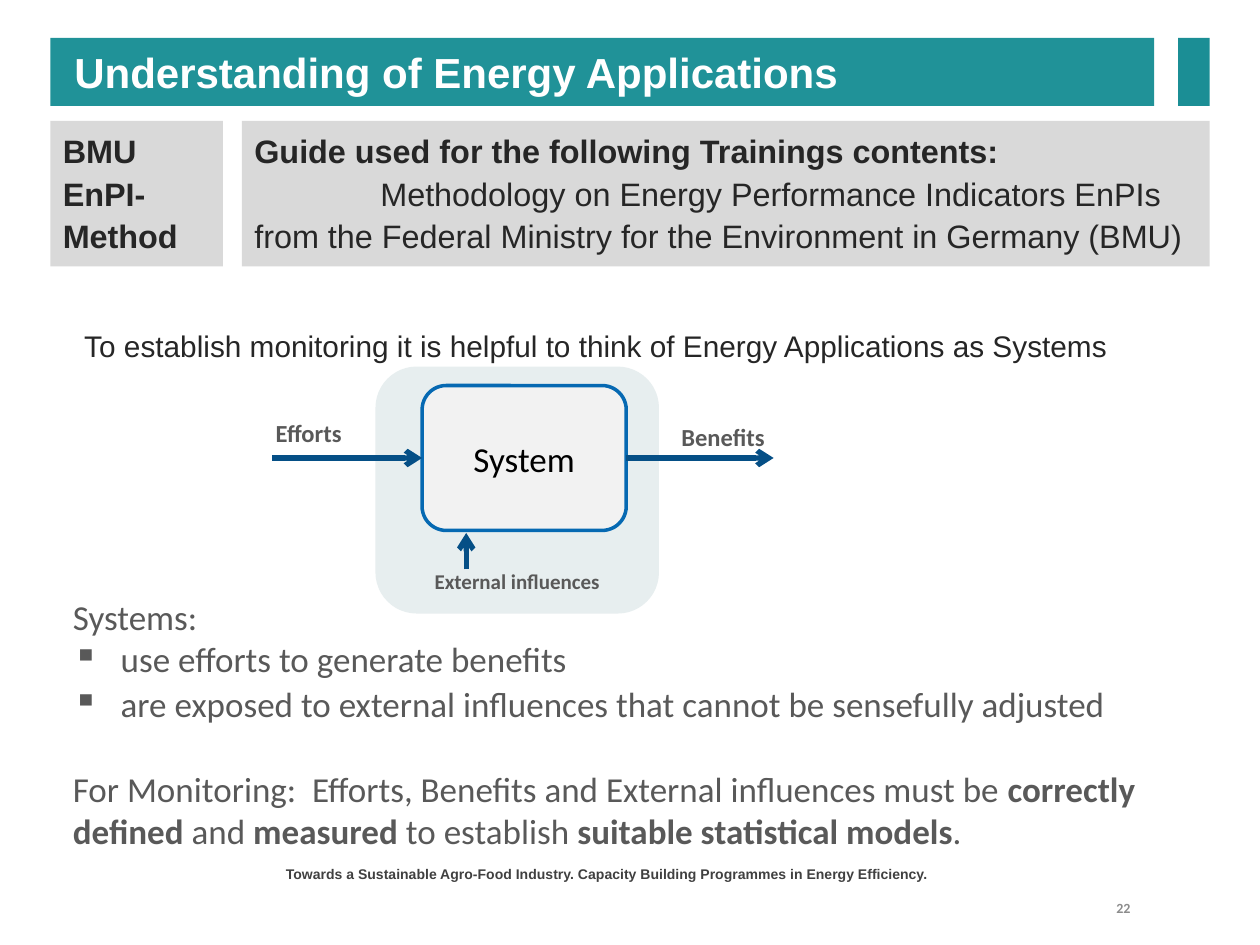
from dataclasses import dataclass

from lxml import etree
from pptx import Presentation
from pptx import util as u
from pptx.dml.color import RGBColor
from pptx.enum import shapes, text
from pptx.oxml import ns


@dataclass(frozen=True)
class Theme:
    heading: str = "Arial"
    body: str = "Calibri"
    teal: str = "209298"
    dark_teal: str = "1B8E95"
    band: str = "D9D9D9"
    boundary: str = "E7EEEF"
    system: str = "F2F2F2"
    outline: str = "0669B2"
    arrow: str = "054F86"
    white: str = "FFFFFF"
    black: str = "000000"
    ink: str = "262626"
    grey: str = "595959"
    footer: str = "404040"
    page: str = "8C8C8C"
    title_size: float = 24
    body_size: float = 20
    band_size: float = 18.5
    intro_size: float = 17
    label_size: float = 14
    small_label_size: float = 12
    footer_size: float = 8


class Board:
    columns, rows = 100, 75

    def __init__(self, slide, size, theme):
        self.slide = slide
        self.theme = theme
        self.cell = size[0] / self.columns, size[1] / self.rows

    def place(self, lengths):
        return [round(n * self.cell[i % 2]) for i, n in enumerate(lengths)]

    def fill_text(self, shape, paragraphs, style, frame=None, paragraph=None):
        body = shape.text_frame
        settings = {"word_wrap": True, "vertical_anchor": text.MSO_ANCHOR.TOP}
        for name, value in (settings | (frame or {})).items():
            setattr(body, name, value)
        for index, entry in enumerate(paragraphs):
            para = body.paragraphs[0] if index == 0 else body.add_paragraph()
            self.indent(para, entry)
            settings = {"alignment": text.PP_ALIGN.LEFT}
            for name, value in (settings | (paragraph or {})).items():
                setattr(para, name, value)
            if "before" in entry:
                para.space_before = u.Pt(entry["before"])
            for words, bold in entry["runs"]:
                run = para.add_run()
                run.text = words
                face, size, colour = style
                for name, value in {"name": face, "size": u.Pt(size), "bold": bold}.items():
                    setattr(run.font, name, value)
                run.font.color.rgb = RGBColor.from_string(colour)
        return shape

    def indent(self, para, entry):
        props = para._p.get_or_add_pPr()
        for name in ("marL", "indent"):
            if name in entry:
                props.set(name, str(u.Inches(entry[name])))
        if "bullet" in entry:
            etree.SubElement(props, ns.qn("a:buChar")).set("char", entry["bullet"])

    def label(self, at, paragraphs, style, frame=None, paragraph=None):
        box = self.slide.shapes.add_textbox(*self.place(at))
        return self.fill_text(box, paragraphs, style, frame, paragraph)

    def panel(self, at, fill, line=None, kind=shapes.MSO_SHAPE.RECTANGLE):
        shape = self.slide.shapes.add_shape(kind, *self.place(at))
        shape.shadow.inherit = False
        shape.fill.solid()
        shape.fill.fore_color.rgb = RGBColor.from_string(fill)
        if line:
            shape.line.color.rgb = RGBColor.from_string(line)
            shape.line.width = u.Pt(2)
        else:
            shape.line.fill.background()
        return shape

    def arrow(self, start, end, begin=None, finish=None):
        arrow = self.slide.shapes.add_connector(
            shapes.MSO_CONNECTOR.STRAIGHT, *self.place(start + end))
        if begin:
            arrow.begin_connect(*begin)
        if finish:
            arrow.end_connect(*finish)
        arrow.line.color.rgb = RGBColor.from_string(self.theme.arrow)
        arrow.line.width = u.Pt(3)
        props = arrow._element.spPr
        etree.SubElement(props.find(ns.qn("a:ln")), ns.qn("a:tailEnd")).set("type", "arrow")
        etree.SubElement(props, ns.qn("a:effectLst"))


def plain(words, bold=False, **layout):
    return {"runs": [(words, bold)], **layout}


def bullet(words):
    return plain(words, marL=0.38, indent=-0.38, bullet="▪")


def header(board):
    t = board.theme
    title = board.panel((4, 3, 87.6, 5.4), t.teal)
    board.fill_text(title, [plain("Understanding of Energy Applications", True)],
                    (t.heading, t.title_size, t.white),
                    {"vertical_anchor": text.MSO_ANCHOR.MIDDLE, "margin_left": u.Inches(0.19)})
    board.panel((93.5, 3, 2.5, 5.4), t.dark_teal)
    guide = [
        plain("Guide used for the following Trainings contents:", True),
        plain("Methodology on Energy Performance Indicators EnPIs from the "
              "Federal Ministry for the Environment in Germany (BMU)", indent=1),
    ]
    method = [plain("BMU EnPI-Method", True)]
    for left, width, words in ((19.2, 76.8, guide), (4, 13.7, method)):
        board.fill_text(board.panel((left, 9.6, width, 11.55), t.band), words,
                        (t.heading, t.band_size, t.ink), paragraph={"line_spacing": 1.1})


def system_diagram(board):
    t = board.theme
    rounded = shapes.MSO_SHAPE.ROUNDED_RECTANGLE
    centred = {"alignment": text.PP_ALIGN.CENTER}
    board.panel((29.8, 29.1, 22.5, 19.6), t.boundary, kind=rounded)
    system = board.panel((33.5, 30.6, 16.2, 11.5), t.system, t.outline, rounded)
    margins = {f"margin_{side}": 0 for side in ("left", "top", "right", "bottom")}
    board.fill_text(system, [plain("System")], (t.body, t.body_size, t.black),
                    {"vertical_anchor": text.MSO_ANCHOR.MIDDLE, **margins}, centred)
    axis = 30.6 + 11.5 / 2
    board.arrow((21.6, axis), (33.5, axis), finish=(system, 1))
    board.arrow((49.7, axis), (61.4, axis), begin=(system, 3))
    board.arrow((37, 45.2), (37, 42.3))
    for left, top, words in ((20.9, 32.7, "Efforts"), (53.1, 33, "Benefits")):
        board.label((left, top, 10.7, 2.7), [plain(words, True)],
                    (t.body, t.label_size, t.grey))
    board.label((32.1, 44.6, 17.9, 2.9), [plain("External influences", True)],
                (t.body, t.small_label_size, t.grey), paragraph=centred)


def explanation(board):
    t = board.theme
    style = t.body, t.body_size, t.grey
    board.label((4.8, 46.8, 62.3, 7.7),
                [plain("Systems:"), bullet("use efforts to generate benefits")], style)
    monitoring = [
        ("For Monitoring:  Efforts, Benefits and External influences must be ", False),
        ("correctly defined ", True), ("and ", False), ("measured", True),
        (" to establish ", False), ("suitable statistical models", True), (".", False),
    ]
    board.label((4.8, 53.7, 93, 14.5), [
        bullet("are exposed to external influences that cannot be sensefully adjusted"),
        {"runs": monitoring, "before": 24.4},
    ], style)


def main():
    deck = Presentation()
    deck.slide_width, deck.slide_height = u.Inches(10), u.Inches(7.5)
    t = Theme()
    board = Board(deck.slides.add_slide(deck.slide_layouts[6]),
                  (deck.slide_width, deck.slide_height), t)
    header(board)
    board.label((5.7, 23, 92.1, 7.1),
                [plain("To establish monitoring it is helpful to think of "
                       "Energy Applications as Systems")],
                (t.heading, t.intro_size, t.ink), paragraph={"line_spacing": 1.9})
    system_diagram(board)
    explanation(board)
    board.label((21.7, 68.2, 55, 2.1),
                [plain("Towards a Sustainable Agro-Food Industry. "
                       "Capacity Building Programmes in Energy Efficiency.", True)],
                (t.heading, t.footer_size, t.footer))
    board.label((88.6, 70.6, 3, 2.4), [plain("22", True)],
                (t.body, t.footer_size, t.page),
                {"vertical_anchor": text.MSO_ANCHOR.MIDDLE, "margin_left": 0,
                 "margin_right": 0, "margin_bottom": 0})
    deck.save("out.pptx")


if __name__ == "__main__":
    main()
